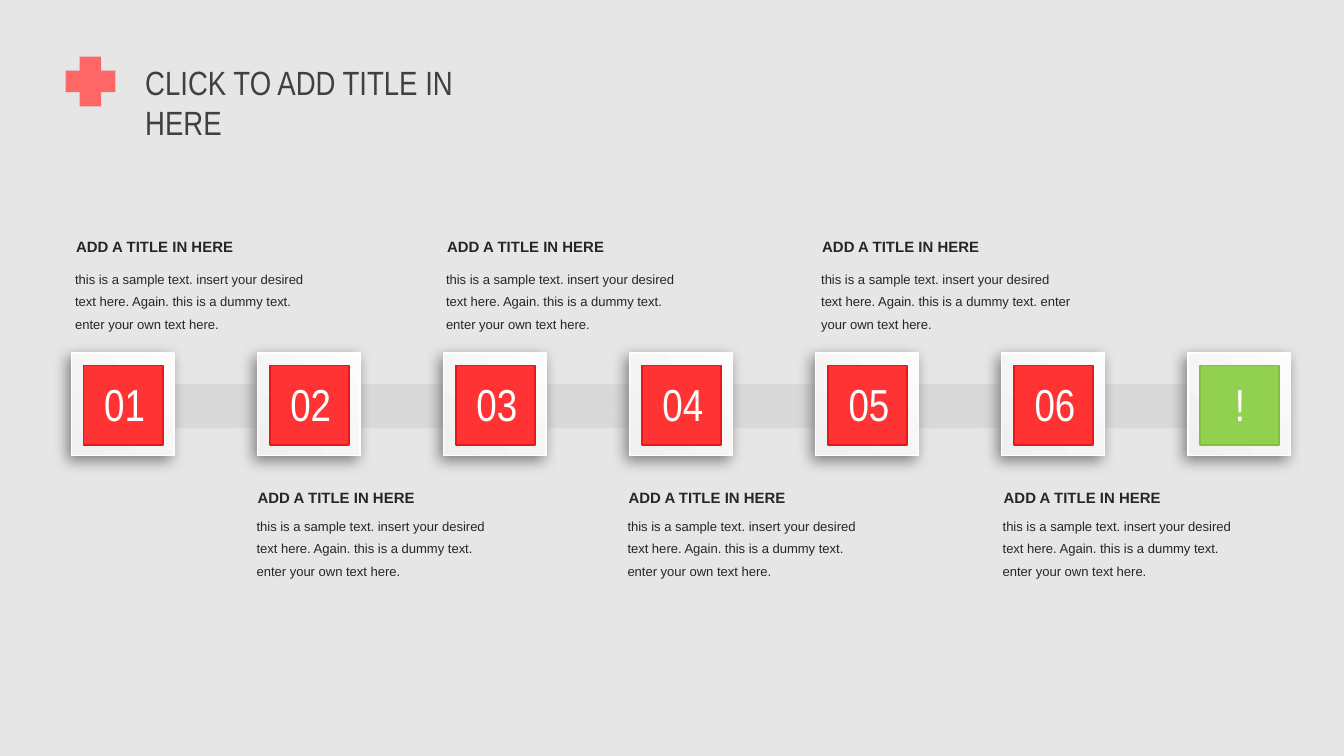
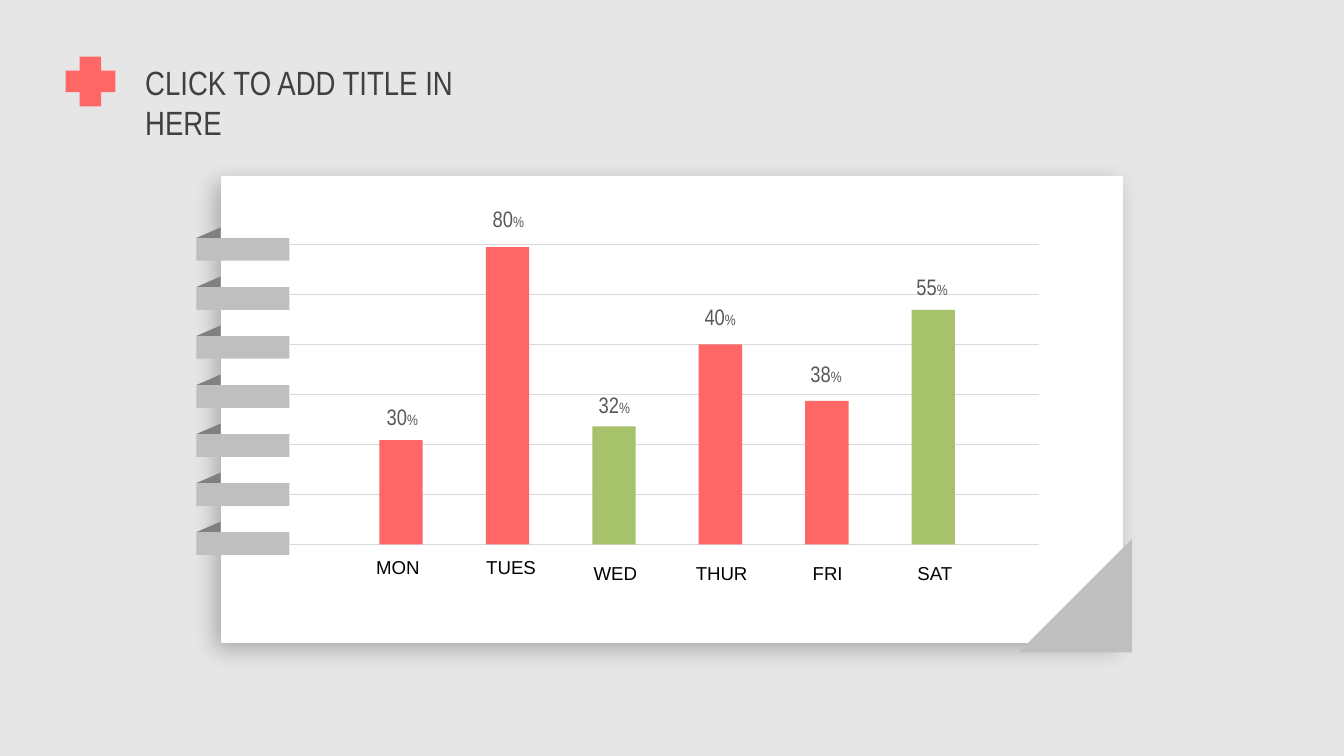
"""Build a six-step timeline slide and a weekly bar slide on a notebook page."""
import lxml.etree
import pptx
import pptx.dml.color
import pptx.enum.shapes
import pptx.enum.text
import pptx.oxml.ns
import pptx.util

Cm = pptx.util.Cm
Pt = pptx.util.Pt
MSO_SHAPE = pptx.enum.shapes.MSO_SHAPE
qn = pptx.oxml.ns.qn

COLORS = {
    "background": "E7E6E6", "title": "404040", "coral": "FF6666",
    "band": "D9D9D9", "white": "FFFFFF", "frame_dark": "F0F0F0",
    "frame_light": "FCFCFC", "red": "FF3333", "red_edge": "E61919",
    "lime": "92D050", "lime_edge": "84BE41", "body": "262626",
    "silver": "BFBFBF", "ring_back": "808080", "green": "A6C36B",
    "value": "595959", "black": "000000",
}
NARROW, SANS = "Arial Narrow", "Arial"
TITLE = "CLICK TO ADD TITLE IN HERE"
HEADING = "ADD A TITLE IN HERE"
SAMPLE = ("this is a sample text. insert your desired text here. Again. "
          "this is a dummy text. enter your own text here.")


def rgb(name):
    return pptx.dml.color.RGBColor.from_string(COLORS[name])


def spread(first, last, count):
    return [first + (last - first) * i / (count - 1) for i in range(count)]


class Deck:
    def __init__(self):
        self.prs = pptx.Presentation()
        self.prs.slide_width, self.prs.slide_height = Cm(25.4), Cm(14.29)
        self.s = None

    def add_slide(self, title):
        self.s = self.prs.slides.add_slide(self.prs.slide_layouts[5])
        fill = self.s.background.fill
        fill.solid()
        fill.fore_color.rgb = rgb("background")
        sp = self.s.shapes.title
        sp.left, sp.top, sp.width, sp.height = Cm(2.49), Cm(1.04), Cm(7.29), Cm(1.02)
        tf = sp.text_frame
        tf.word_wrap = True
        tf.auto_size = pptx.enum.text.MSO_AUTO_SIZE.NONE
        tf.vertical_anchor = pptx.enum.text.MSO_ANCHOR.TOP
        p = tf.paragraphs[0]
        p.text = title
        p.alignment = pptx.enum.text.PP_ALIGN.LEFT
        self.font(p, 18, NARROW, "title")
        plus = self.shape(1.24, 1.07, 0.94, 0.94, "coral", kind=MSO_SHAPE.CROSS)
        plus.adjustments[0] = 0.284

    def font(self, p, size, name, color, bold=False):
        p.font.size, p.font.name, p.font.bold = Pt(size), name, bold
        p.font.color.rgb = rgb(color)

    def paint(self, sp, color, line=None, line_width=1):
        sp.shadow.inherit = False
        sp.fill.solid()
        sp.fill.fore_color.rgb = rgb(color)
        if line:
            sp.line.color.rgb = rgb(line)
            sp.line.width = Pt(line_width)
        else:
            sp.line.fill.background()
        return sp

    def shape(self, x, y, w, h, color, line=None, line_width=1,
              kind=MSO_SHAPE.RECTANGLE):
        sp = self.s.shapes.add_shape(kind, Cm(x), Cm(y), Cm(w), Cm(h))
        return self.paint(sp, color, line, line_width)

    def polygon(self, points, color):
        start, *rest = [(Cm(x), Cm(y)) for x, y in points]
        builder = self.s.shapes.build_freeform(*start)
        builder.add_line_segments(rest)
        return self.paint(builder.convert_to_shape(), color)

    def shadow(self, sp, color, alpha, blur, dist, angle):
        effects = sp._element.spPr.find(qn("a:effectLst"))
        outer = lxml.etree.SubElement(
            effects, qn("a:outerShdw"), blurRad=str(Pt(blur)),
            dist=str(Pt(dist)), dir=str(angle * 60000), algn="ctr", rotWithShape="0")
        clr = lxml.etree.SubElement(outer, qn("a:srgbClr"), val=COLORS[color])
        lxml.etree.SubElement(clr, qn("a:alpha"), val=str(alpha * 1000))

    def line(self, x1, x2, y, color, width):
        cx = self.s.shapes.add_connector(
            pptx.enum.shapes.MSO_CONNECTOR.STRAIGHT, Cm(x1), Cm(y), Cm(x2), Cm(y))
        cx.line.color.rgb = rgb(color)
        cx.line.width = Pt(width)
        lxml.etree.SubElement(cx._element.spPr, qn("a:effectLst"))

    def text(self, x, y, w, h, text, size, name, color, bold=False,
             wrap=False, spacing=None):
        sp = self.s.shapes.add_textbox(Cm(x), Cm(y), Cm(w), Cm(h))
        tf = sp.text_frame
        tf.word_wrap = wrap
        tf.auto_size = pptx.enum.text.MSO_AUTO_SIZE.SHAPE_TO_FIT_TEXT
        p = tf.paragraphs[0]
        p.add_run().text = text
        self.font(p, size, name, color, bold)
        if spacing:
            p.line_spacing = Pt(spacing)
        return p

    def step(self, x, label, color, edge, indent):
        frame = self.shape(x, 6.67, 1.94, 1.94, "white", "white", 0.75)
        frame.fill.gradient()
        frame.fill.gradient_angle = 45
        for stop, shade in zip(frame.fill.gradient_stops, ("frame_dark", "frame_light")):
            stop.color.rgb = rgb(shade)
        self.shadow(frame, "ring_back", 100, 8, 3, 130)
        self.shape(x + 0.23, 6.91, 1.5, 1.5, color, edge)
        self.text(x + indent, 6.99, 1.94 - 2 * indent + 0.1, 1.27,
                  label, 24, NARROW, "white")

    def note(self, x, heading_y, body_y, width):
        self.text(x, body_y, width, 1.55, SAMPLE, 7, SANS, "body",
                  wrap=True, spacing=12)
        self.text(x + 0.02, heading_y, 3.56, 0.69, HEADING, 8, SANS, "body",
                  bold=True, wrap=True, spacing=12)

    def ring(self, y):
        self.polygon([(3.71, y), (4.17, y - 0.2), (4.17, y)], "ring_back")
        self.shape(3.71, y, 1.76, 0.43, "silver")

    def bar(self, x, base, height, color, label_x, label_y, value):
        self.shape(x, base - height, 0.82, height, color)
        p = self.text(label_x, label_y, 1.17, 0.76, value, 12, NARROW, "value")
        r = p.add_run()
        r.text = "%"
        r.font.size = Pt(8)


def timeline(deck):
    deck.add_slide(TITLE)
    deck.shape(1.5, 7.26, 22.81, 0.84, "band")
    *steps, last = spread(1.35, 22.45, 7)
    for number, x in enumerate(steps, 1):
        deck.step(x, f"{number:02}", "red", "red_edge", 0.37)
    deck.step(last, "!", "lime", "lime_edge", 0.64)
    for x, width in ((1.17, 4.93), (8.18, 5.05), (15.27, 5.23)):
        deck.note(x, 4.29, 4.88, width)
    for x in (4.6, 11.61, 18.7):
        deck.note(x, 9.02, 9.55, 5.11)


def notebook(deck):
    deck.add_slide(TITLE)
    page = deck.shape(4.2, 3.35, 17, 8.79, "white", "white")
    deck.shadow(page, "black", 26, 12, 5, 135)
    deck.polygon([(21.39, 10.19), (19.25, 12.33), (21.39, 12.33)], "silver")
    base = 10.29
    for y in spread(base, 4.62, 7):
        deck.line(5.49, 19.63, y, "band", 0.5)
    for y in spread(10.06, 4.5, 7):
        deck.ring(y)
    bars = [("30", 1.97, "coral", 7.49), ("80", 5.62, "coral", 3.76),
            ("32", 2.23, "green", 7.26), ("40", 3.78, "coral", 5.61),
            ("38", 2.71, "coral", 6.68), ("55", 4.43, "green", 5.03)]
    columns = zip(spread(7.17, 17.23, 6), spread(7.06, 17.07, 6), bars)
    for x, label_x, (value, height, color, label_y) in columns:
        deck.bar(x, base, height, color, label_x, label_y, value)
    days = [("MON", 6.86, 10.39, 1.35), ("TUES", 8.94, 10.39, 1.47),
            ("WED", 10.97, 10.49, 1.35), ("THUR", 12.9, 10.49, 1.5),
            ("FRI", 15.11, 10.49, 1.09), ("SAT", 17.09, 10.49, 1.19)]
    for day, x, y, width in days:
        deck.text(x, y, width, 0.69, day, 10, SANS, "black")


def main():
    deck = Deck()
    timeline(deck)
    notebook(deck)
    deck.prs.save("out.pptx")


if __name__ == "__main__":
    main()
